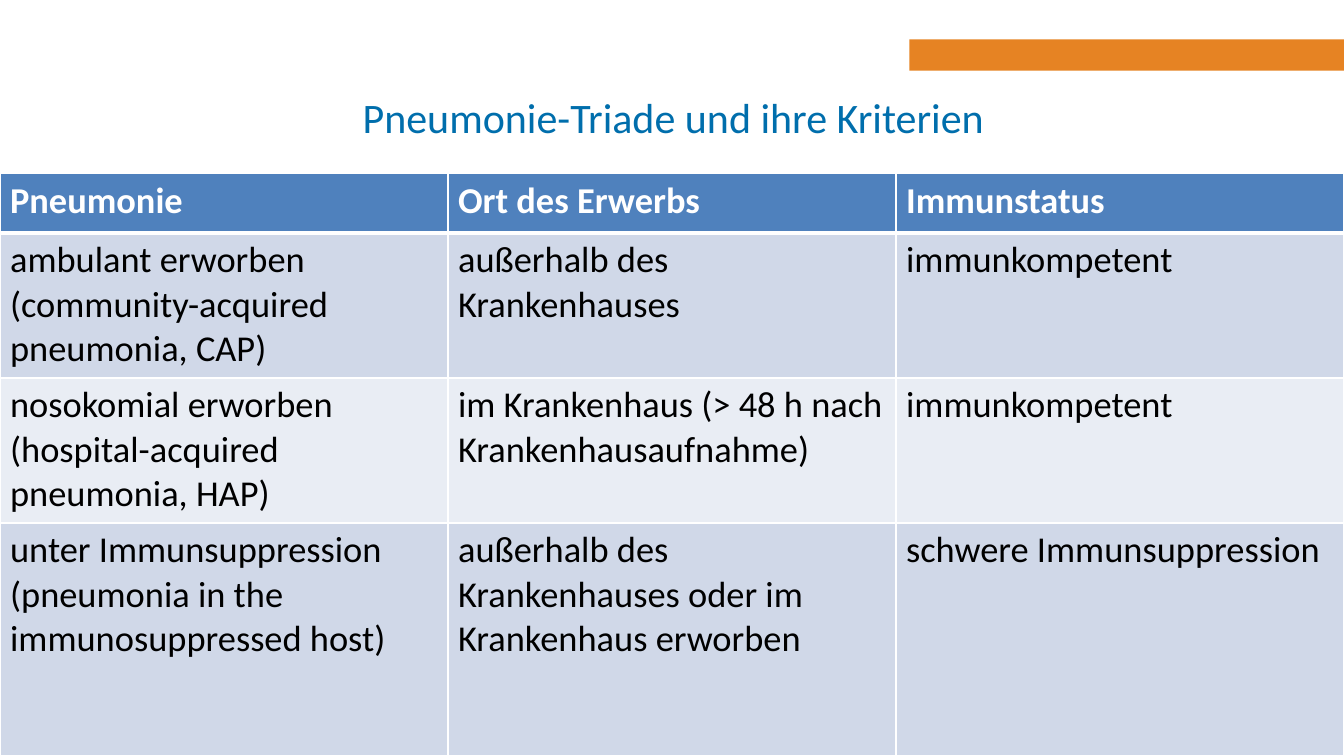
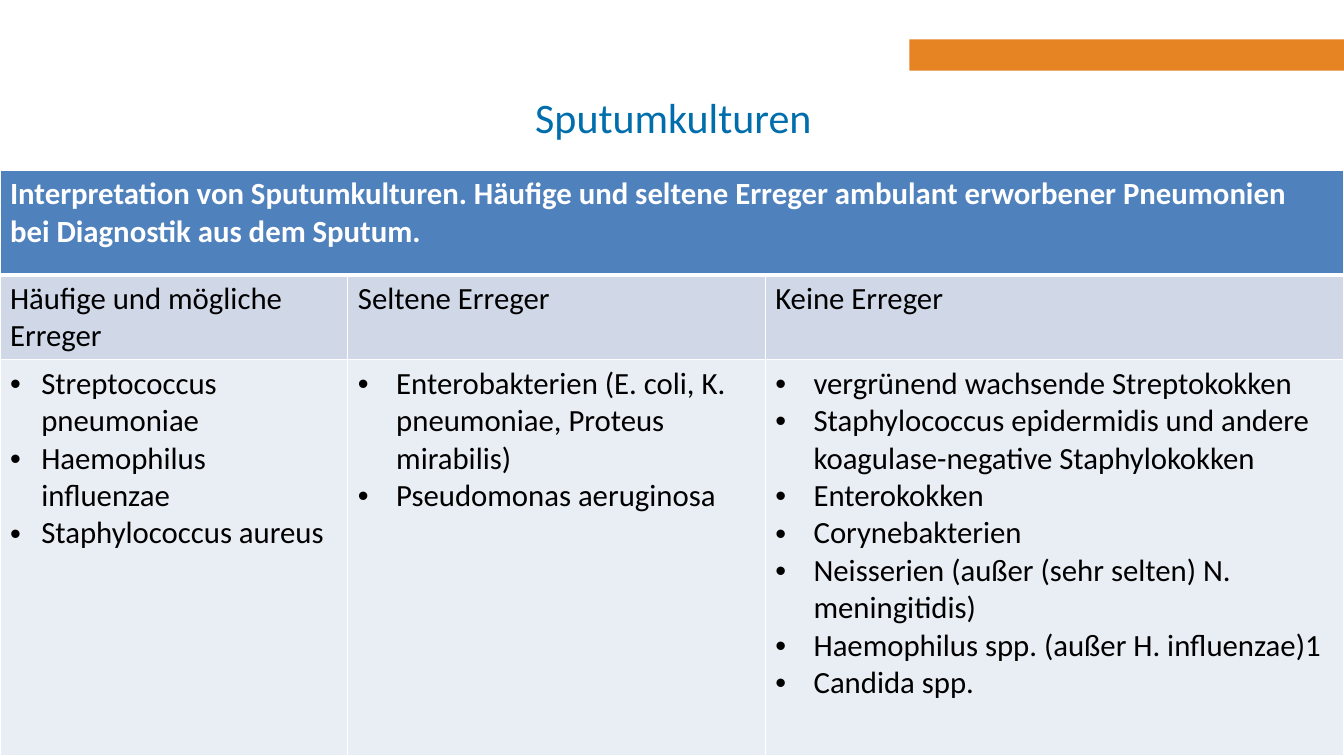
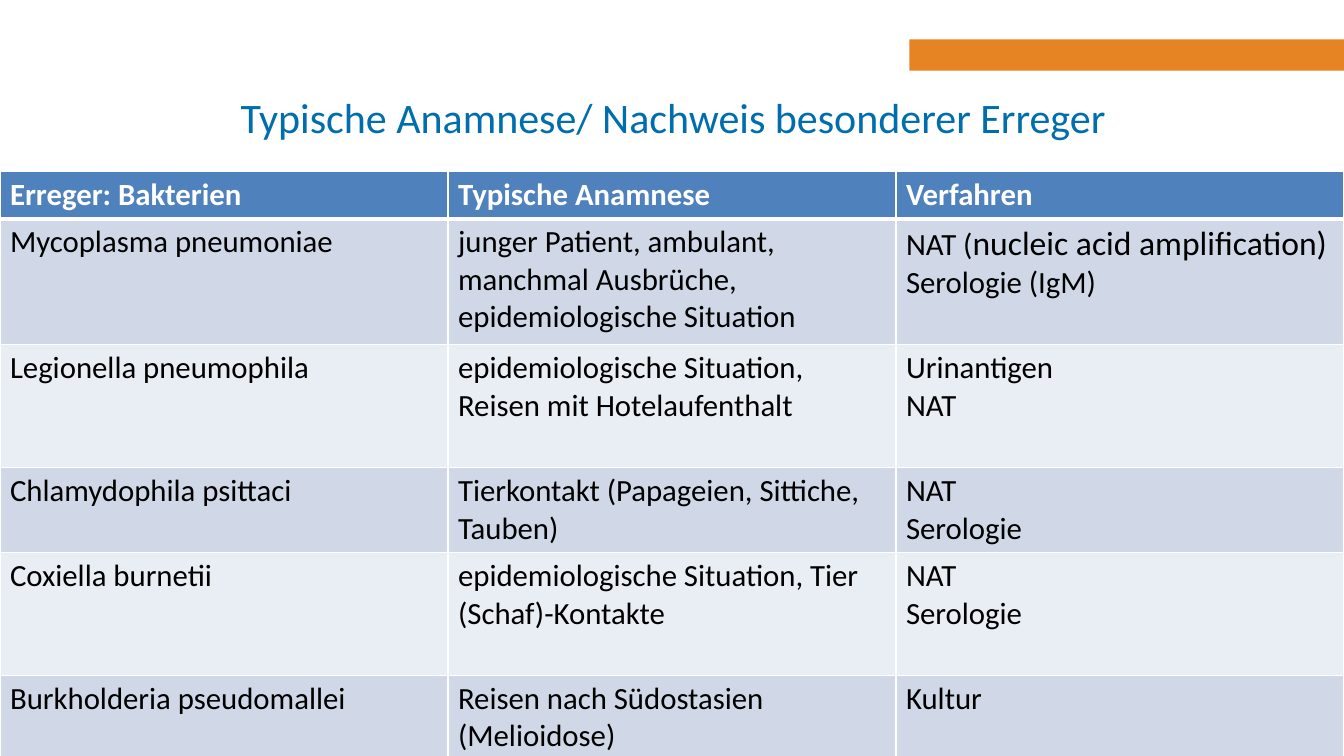
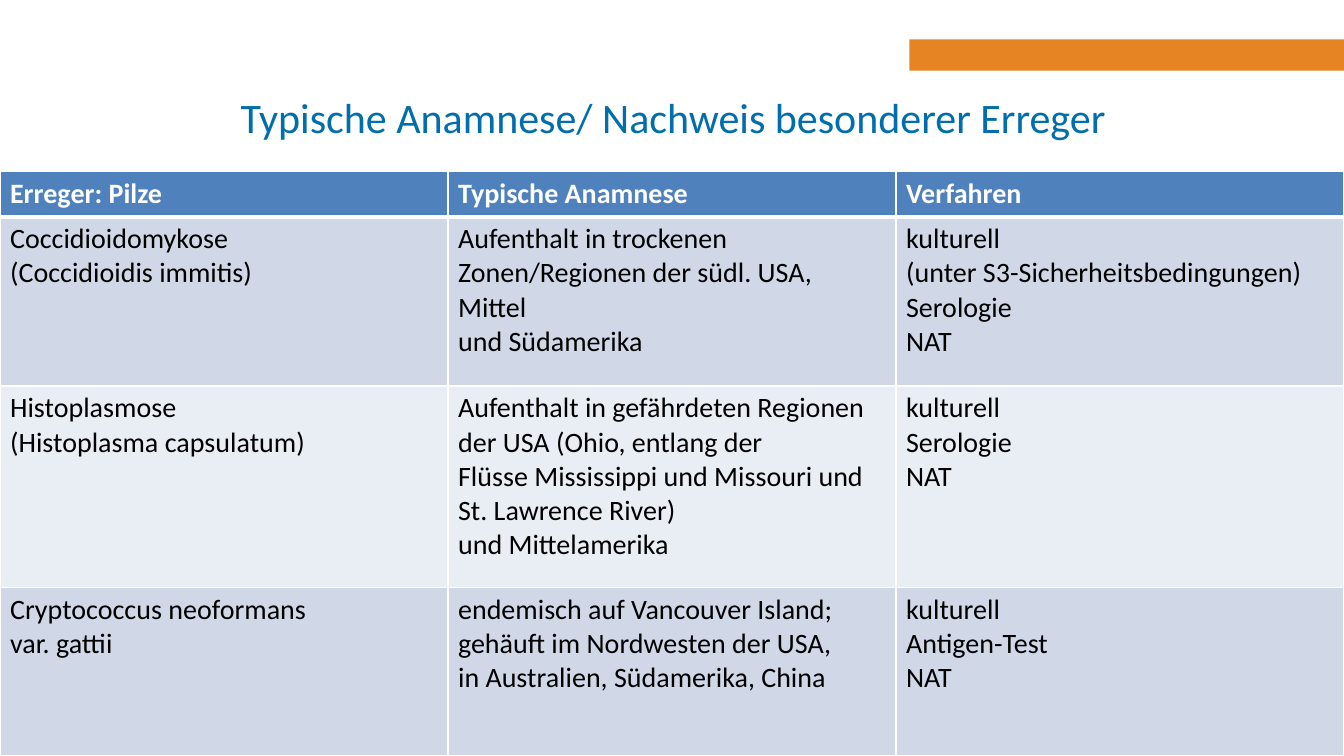
"""Build four slides with tables on pneumonia types and their pathogens."""
from lxml import etree
from pptx import Presentation
from pptx import util as u
from pptx.dml.color import RGBColor
from pptx.enum import shapes, text
from pptx.oxml.ns import qn

ORANGE, TITLE, HEAD, WHITE, BLACK = "E68323", "006EAC", "4F81BD", "FFFFFF", "000000"
BANDS = ["E9EDF4", "D0D8E8"]
WIDTH, HEIGHT = 13.33, 7.5
THIRDS = [WIDTH / 3] * 3

SLIDES = [
    {"title": "Pneumonie-Triade und ihre Kriterien", "top": 1.72, "size": 26,
     "cols": THIRDS, "heights": [0.59, 1.44, 1.44, 2.31],
     "rows": [
         ["Pneumonie", "Ort des Erwerbs", "Immunstatus"],
         ["ambulant erworben\n(community-acquired pneumonia, CAP)",
          "außerhalb des Krankenhauses", "immunkompetent"],
         ["nosokomial erworben\n(hospital-acquired pneumonia, HAP)",
          "im Krankenhaus (> 48 h nach Krankenhausaufnahme)", "immunkompetent"],
         ["unter Immunsuppression (pneumonia in the immunosuppressed host)",
          "außerhalb des Krankenhauses oder im Krankenhaus erworben",
          "schwere Immunsuppression"]]},
    {"title": "Sputumkulturen", "top": 1.69, "size": 22,
     "cols": [3.45, 4.14, 5.74], "heights": [1.04, 0.84, 3.93],
     "bullet_row": 2, "indents": [0.31, 0.38, 0.38],
     "rows": [
         ["Interpretation von Sputumkulturen. Häufige und seltene Erreger ambulant "
          "erworbener Pneumonien\nbei Diagnostik aus dem Sputum."],
         ["Häufige und mögliche Erreger", "Seltene Erreger", "Keine Erreger"],
         ["Streptococcus pneumoniae\nHaemophilus influenzae\nStaphylococcus aureus",
          "Enterobakterien (E. coli, K. pneumoniae, Proteus mirabilis)\n"
          "Pseudomonas aeruginosa",
          "vergrünend wachsende Streptokokken\n"
          "Staphylococcus epidermidis und andere koagulase-negative Staphylokokken\n"
          "Enterokokken\nCorynebakterien\n"
          "Neisserien (außer (sehr selten) N. meningitidis)\n"
          "Haemophilus spp. (außer H. influenzae)1\nCandida spp."]]},
    {"title": "Typische Anamnese/ Nachweis besonderer Erreger", "top": 1.7, "size": 22,
     "cols": THIRDS, "heights": [0.47, 1.25, 1.22, 0.84, 1.22, 0.8],
     "rows": [
         ["Erreger: Bakterien", "Typische Anamnese", "Verfahren"],
         ["Mycoplasma pneumoniae",
          "junger Patient, ambulant, manchmal Ausbrüche,\nepidemiologische Situation",
          "NAT (|nucleic acid amplification)\nSerologie (IgM)"],
         ["Legionella pneumophila",
          "epidemiologische Situation,\nReisen mit Hotelaufenthalt", "Urinantigen\nNAT"],
         ["Chlamydophila psittaci", "Tierkontakt (Papageien, Sittiche, Tauben)",
          "NAT\nSerologie"],
         ["Coxiella burnetii", "epidemiologische Situation, Tier (Schaf)-Kontakte",
          "NAT\nSerologie"],
         ["Burkholderia pseudomallei", "Reisen nach Südostasien (Melioidose)", "Kultur"]]},
    {"title": "Typische Anamnese/ Nachweis besonderer Erreger", "top": 1.7, "size": 20,
     "cols": THIRDS, "heights": [0.45, 1.68, 2, 1.67],
     "rows": [
         ["Erreger: Pilze", "Typische Anamnese", "Verfahren"],
         ["Coccidioidomykose\n(Coccidioidis immitis)",
          "Aufenthalt in trockenen Zonen/Regionen der südl. USA, Mittel\nund Südamerika",
          "kulturell\n(unter S3-Sicherheitsbedingungen)\nSerologie\nNAT"],
         ["Histoplasmose\n(Histoplasma capsulatum)",
          "Aufenthalt in gefährdeten Regionen der USA (Ohio, entlang der\n"
          "Flüsse Mississippi und Missouri und St. Lawrence River)\nund Mittelamerika",
          "kulturell\nSerologie\nNAT"],
         ["Cryptococcus neoformans\nvar. gattii",
          "endemisch auf Vancouver Island; gehäuft im Nordwesten der USA,\n"
          "in Australien, Südamerika, China",
          "kulturell\nAntigen-Test\nNAT"]]},
]


def paint(fmt, color):
    """Give a fill a solid hex colour."""
    fmt.solid()
    fmt.fore_color.rgb = RGBColor.from_string(color)


def add_run(p, words, color, **formats):
    """Add a run of text with the given font values."""
    r = p.add_run()
    r.text = words
    for name, value in {"name": "Calibri", **formats}.items():
        setattr(r.font, name, value)
    paint(r.font.fill, color)


prs = Presentation()
prs.slide_width, prs.slide_height = u.Inches(WIDTH), u.Inches(HEIGHT)

for spec_ in SLIDES:
    s = prs.slides.add_slide(prs.slide_layouts[6])
    bar = s.shapes.add_shape(shapes.MSO_SHAPE.RECTANGLE, u.Inches(9.02), u.Inches(0.39),
                             u.Inches(4.31), u.Inches(0.31))
    bar.shadow.inherit = False
    paint(bar.fill, ORANGE)
    bar.line.fill.background()

    tf = s.shapes.add_textbox(u.Inches(1.97), u.Inches(0.69),
                              u.Inches(9.42), u.Inches(0.93)).text_frame
    tf.word_wrap = True
    tf.vertical_anchor = text.MSO_ANCHOR.MIDDLE
    tf.paragraphs[0].alignment = text.PP_ALIGN.CENTER
    add_run(tf.paragraphs[0], spec_["title"], TITLE, size=u.Pt(30))

    rows, cols, heights = spec_["rows"], spec_["cols"], spec_["heights"]
    table = s.shapes.add_table(len(rows), len(cols), 0, u.Inches(spec_["top"]),
                               u.Inches(WIDTH), u.Inches(sum(heights))).table
    for column, width in zip(table.columns, cols):
        column.width = u.Inches(width)
    for row, height in zip(table.rows, heights):
        row.height = u.Inches(height)
    if len(rows[0]) == 1:
        table.cell(0, 0).merge(table.cell(0, len(cols) - 1))

    for i in range(len(rows)):
        for j in range(len(cols)):
            cell = table.cell(i, j)
            paint(cell.fill, BANDS[i % 2] if i else HEAD)
            tcPr = cell._tc.get_or_add_tcPr()
            weights = {"a:lnL": 1, "a:lnR": 1, "a:lnT": 3 if i == 1 else 1,
                       "a:lnB": 1 if i else 3}
            for k, (tag, weight) in enumerate(weights.items()):
                ln = etree.Element(qn(tag), w=str(u.Pt(weight)))
                solid = etree.SubElement(ln, qn("a:solidFill"))
                etree.SubElement(solid, qn("a:srgbClr"), val=WHITE)
                tcPr.insert(k, ln)
            if cell.is_spanned:
                continue
            for n, line in enumerate(rows[i][j].split("\n")):
                tf = cell.text_frame
                p = tf.add_paragraph() if n else tf.paragraphs[0]
                if i == spec_.get("bullet_row"):
                    indent = u.Inches(spec_["indents"][j])
                    pPr = p._p.get_or_add_pPr()
                    pPr.set("marL", str(indent))
                    pPr.set("indent", str(-indent))
                    etree.SubElement(pPr, qn("a:buFont"), typeface="Arial")
                    etree.SubElement(pPr, qn("a:buChar"), char="•")
                for k, words in enumerate(line.split("|")):
                    add_run(p, words, BLACK if i else WHITE,
                            size=u.Pt(spec_["size"] + 2 * k), bold=i == 0)

prs.save("out.pptx")
